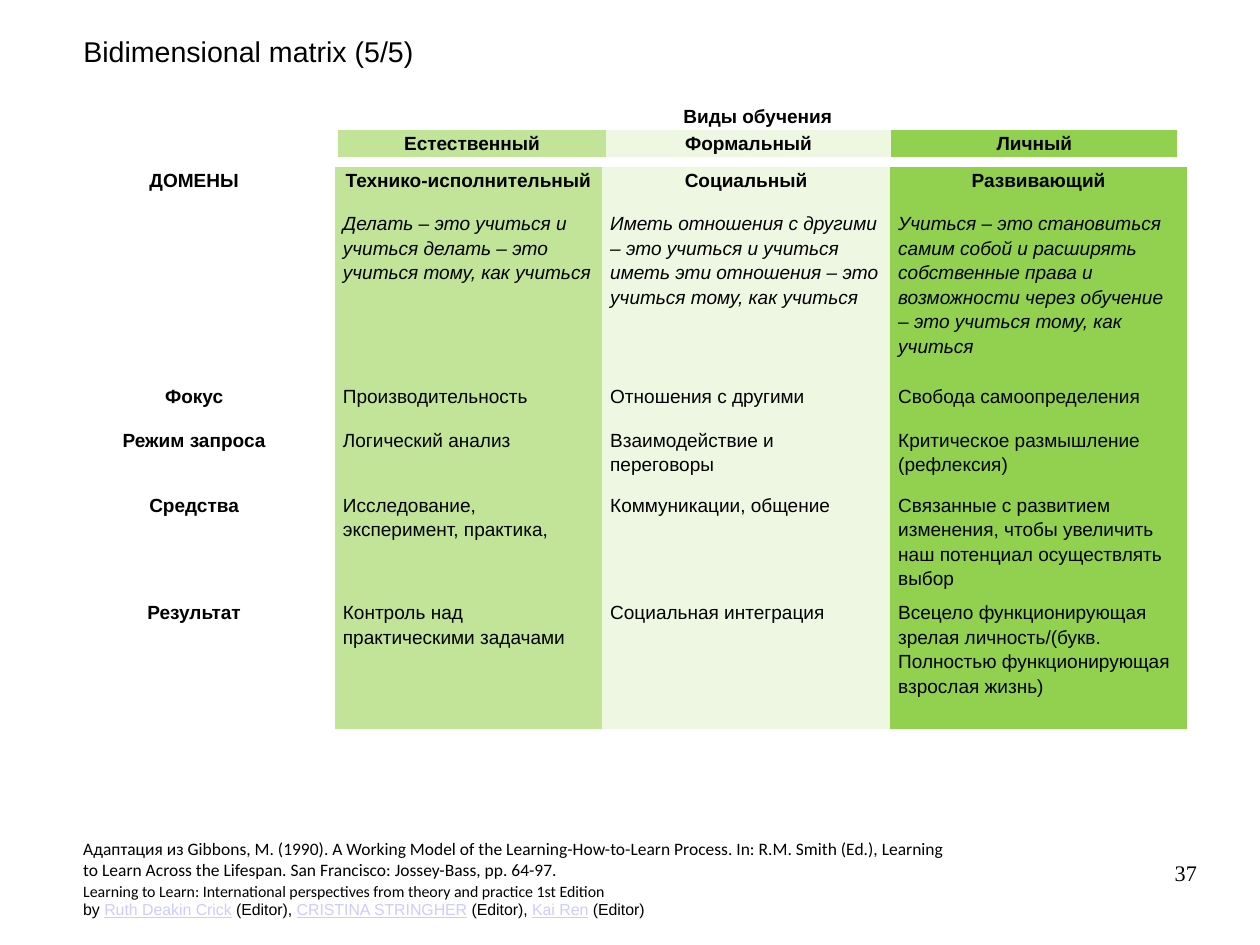
from dataclasses import dataclass

from pptx import Presentation
from pptx.dml.color import RGBColor
from pptx.enum.text import MSO_ANCHOR, MSO_AUTO_SIZE, PP_ALIGN
from pptx.slide import Slide
from pptx.table import Table, _Cell
from pptx.text.text import TextFrame
from pptx.util import Cm, Pt

LEFT, CENTER, RIGHT = PP_ALIGN.LEFT, PP_ALIGN.CENTER, PP_ALIGN.RIGHT
TOP, MIDDLE = MSO_ANCHOR.TOP, MSO_ANCHOR.MIDDLE
NO_AUTOFIT = MSO_AUTO_SIZE.NONE
PLAIN_TABLE_STYLE = "{2D5ABB26-0587-4C30-8999-92F81FD0307C}"
TABLE_SPACING = 1.15
TEXT_SPACING = 0.93


@dataclass(frozen=True)
class Theme:
    ink: str = "000000"
    link: str = "CCCCFF"
    columns: tuple[str | None, ...] = (None, "C2E498", "EDF7E1", "92D050")
    sans: str = "Arial"
    humanist: str = "Calibri"
    serif: str = "Times New Roman"
    title: int = 18
    number: int = 14
    table: int = 12
    source: int = 11
    book: int = 10


THEME = Theme()


@dataclass(frozen=True)
class Span:
    text: str
    size: int
    name: str = THEME.sans
    color: str = THEME.ink
    bold: bool = False
    italic: bool = False
    underline: bool = False


@dataclass(frozen=True)
class Line:
    spans: tuple[Span, ...]
    alignment: PP_ALIGN = LEFT
    line_spacing: float = 1.0


@dataclass(frozen=True)
class Area:
    left: float
    top: float
    width: float
    height: float

    def lengths(self) -> tuple[Cm, ...]:
        return Cm(self.left), Cm(self.top), Cm(self.width), Cm(self.height)


@dataclass(frozen=True)
class Note:
    area: Area
    lines: tuple[Line, ...]
    anchor: MSO_ANCHOR = TOP
    margins: tuple[float, float] = (0.25, 0.13)


@dataclass(frozen=True)
class Matrix:
    left: float
    top: float
    widths: tuple[float, ...]
    heights: tuple[float, ...]
    margin: float
    texts: tuple[tuple[str, ...], ...]
    heading_rows: int
    italic_row: int | None = None


TITLE = Note(
    Area(1.6, 0.69, 17.2, 0.97),
    (Line((Span("Bidimensional matrix (5/5)", THEME.title),), line_spacing=TEXT_SPACING),),
)

EDITORS = ("Ruth Deakin Crick", "CRISTINA STRINGHER", "Kai Ren")


def editor_spans() -> tuple[Span, ...]:
    spans = [Span("by ", THEME.book)]
    for editor in EDITORS:
        ending = " (Editor)" if editor == EDITORS[-1] else " (Editor), "
        spans += [
            Span(editor, THEME.book, color=THEME.link, underline=True),
            Span(ending, THEME.book),
        ]
    return tuple(spans)


NOTES = (
    Note(
        Area(1.6, 18.49, 20, 1.19),
        (Line((Span(
            "Адаптация из Gibbons, M. (1990). A Working Model of the Learning-How-to-Learn Process. "
            "In: R.M. Smith (Ed.), Learning to Learn Across the Lifespan. "
            "San Francisco: Jossey-Bass, pp. 64-97.",
            THEME.source, THEME.humanist),)),),
        MIDDLE,
    ),
    Note(
        Area(1.6, 19.5, 26, 1.45),
        (
            Line((Span(
                "Learning to Learn: International perspectives from theory and practice 1st Edition",
                THEME.book, THEME.humanist),), line_spacing=TEXT_SPACING),
            Line(editor_spans(), line_spacing=TEXT_SPACING),
        ),
    ),
    Note(
        Area(20.07, 19.13, 6.53, 1.45),
        (Line((Span("37", THEME.number, THEME.serif),), RIGHT, 0.95),),
        margins=(0, 0),
    ),
)

LEARNING_KINDS = Matrix(
    1.6, 2.29, (5.92, 5.94, 6.35, 6.35), (0.6, 0.6), 0.13,
    (
        ("", "Виды обучения", "", ""),
        ("", "Естественный", "Формальный", "Личный"),
    ),
    heading_rows=2,
)

DOMAINS = Matrix(
    1.19, 3.7, (6.25, 5.94, 6.4, 6.6), (0.97, 3.84, 0.97, 1.45, 2.39, 2.87), 0.18,
    (
        ("ДОМЕНЫ", "Технико-исполнительный", "Социальный", "Развивающий"),
        ("", "Делать – это учиться и учиться делать – это учиться тому, как учиться",
         "Иметь отношения с другими – это учиться и учиться иметь эти отношения – это учиться тому, как учиться",
         "Учиться – это становиться самим собой и расширять собственные права и возможности "
         "через обучение – это учиться тому, как учиться"),
        ("Фокус", "Производительность", "Отношения с другими", "Свобода самоопределения"),
        ("Режим запроса", "Логический анализ", "Взаимодействие и переговоры",
         "Критическое размышление (рефлексия)"),
        ("Средства", "Исследование, эксперимент, практика,", "Коммуникации, общение",
         "Связанные с развитием изменения, чтобы увеличить наш потенциал осуществлять выбор"),
        ("Результат", "Контроль над практическими задачами", "Социальная интеграция",
         "Всецело функционирующая зрелая личность/(букв. Полностью функционирующая взрослая жизнь)"),
    ),
    heading_rows=1,
    italic_row=1,
)


def write_lines(frame: TextFrame, lines: tuple[Line, ...]) -> None:
    for index, line in enumerate(lines):
        para = frame.add_paragraph() if index else frame.paragraphs[0]
        para.alignment = line.alignment
        para.line_spacing = line.line_spacing
        for span in line.spans:
            run = para.add_run()
            run.text = span.text
            formats = {"size": Pt(span.size), "name": span.name, "bold": span.bold,
                       "italic": span.italic, "underline": span.underline}
            for attribute, value in formats.items():
                setattr(run.font, attribute, value)
            run.font.color.rgb = RGBColor.from_string(span.color)


def fill_frame(frame: TextFrame, note: Note) -> None:
    side, edge = (Cm(margin) for margin in note.margins)
    formats = {"word_wrap": True, "auto_size": NO_AUTOFIT, "vertical_anchor": note.anchor,
               "margin_left": side, "margin_right": side,
               "margin_top": edge, "margin_bottom": edge}
    for attribute, value in formats.items():
        setattr(frame, attribute, value)
    write_lines(frame, note.lines)


def fill_cell(cell: _Cell, matrix: Matrix, row: int, column: int, color: str | None) -> None:
    formats = {"margin_left": Cm(matrix.margin), "margin_right": Cm(matrix.margin),
               "margin_top": 0, "margin_bottom": 0, "vertical_anchor": TOP}
    for attribute, value in formats.items():
        setattr(cell, attribute, value)
    if color:
        cell.fill.solid()
        cell.fill.fore_color.rgb = RGBColor.from_string(color)
    else:
        cell.fill.background()
    text = matrix.texts[row][column]
    if not text:
        cell.text_frame.paragraphs[0]._p.get_or_add_endParaRPr().set("sz", str(THEME.table * 100))
        return
    heading = row < matrix.heading_rows or column == 0
    span = Span(text, THEME.table, bold=heading, italic=row == matrix.italic_row)
    write_lines(cell.text_frame, (Line((span,), CENTER if heading else LEFT, TABLE_SPACING),))


def add_matrix(page: Slide, matrix: Matrix, clear_rows: int = 0) -> Table:
    area = Area(matrix.left, matrix.top, sum(matrix.widths), sum(matrix.heights))
    table = page.shapes.add_table(len(matrix.heights), len(matrix.widths), *area.lengths()).table
    table.first_row = table.horz_banding = False
    table._tbl.tblPr[0].text = PLAIN_TABLE_STYLE
    for column, width in enumerate(matrix.widths):
        table.columns[column].width = Cm(width)
    for row, height in enumerate(matrix.heights):
        table.rows[row].height = Cm(height)
        for column, color in enumerate(THEME.columns):
            fill_cell(table.cell(row, column), matrix, row, column, None if row < clear_rows else color)
    return table


def main() -> None:
    deck = Presentation()
    deck.slide_width, deck.slide_height = Cm(28), Cm(21)
    page = deck.slides.add_slide(deck.slide_layouts[5])
    title = page.shapes.title
    title.left, title.top, title.width, title.height = TITLE.area.lengths()
    fill_frame(title.text_frame, TITLE)
    kinds = add_matrix(page, LEARNING_KINDS, clear_rows=1)
    kinds.cell(0, 0).merge(kinds.cell(1, 0))
    kinds.cell(0, 1).merge(kinds.cell(0, 3))
    add_matrix(page, DOMAINS)
    for note in NOTES:
        box = page.shapes.add_textbox(*note.area.lengths())
        fill_frame(box.text_frame, note)
    deck.save("out.pptx")


if __name__ == "__main__":
    main()
